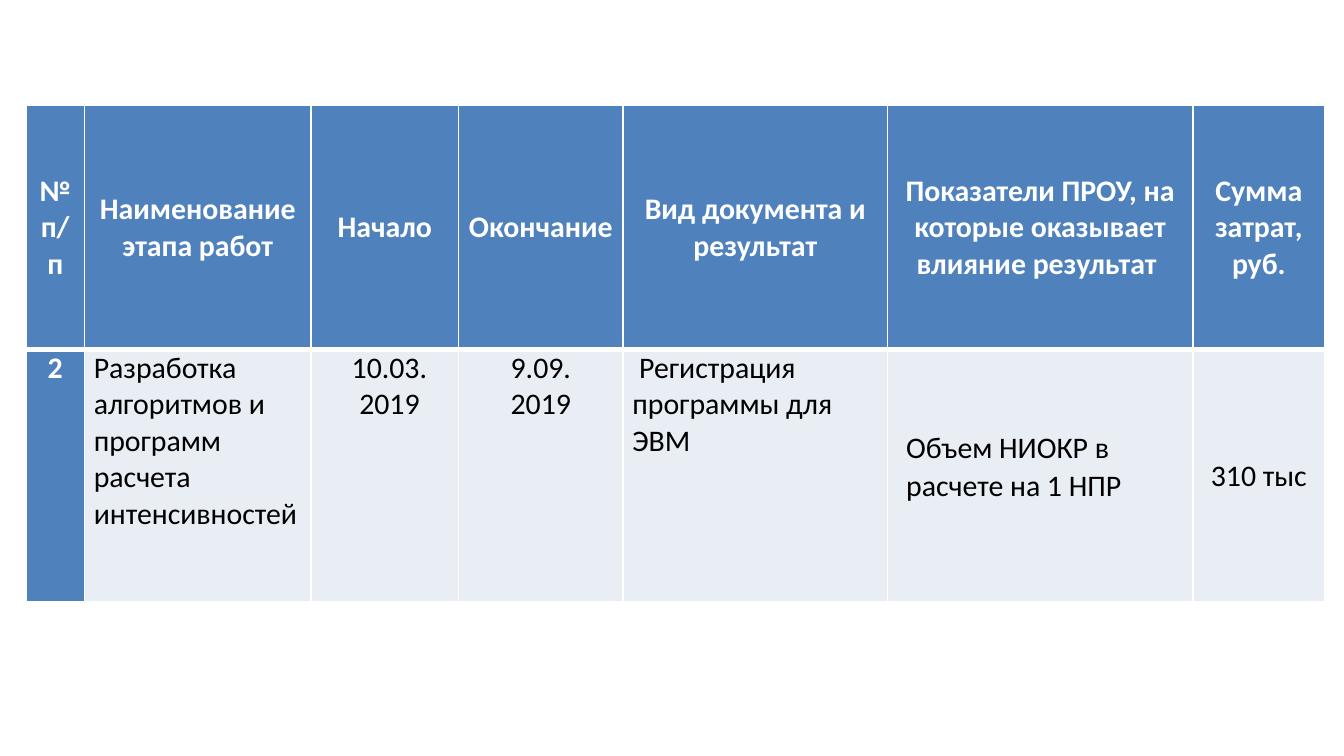
from dataclasses import dataclass

from lxml.etree import SubElement
from pptx import Presentation
from pptx.dml.color import RGBColor
from pptx.enum.text import MSO_ANCHOR, PP_ALIGN
from pptx.oxml.ns import qn
from pptx.util import Pt


@dataclass(frozen=True)
class Theme:
    font: str = "Calibri"
    size: float = 16
    accent: str = "4F81BD"
    body: str = "E9EDF4"
    light: str = "FFFFFF"
    dark: str = "000000"


theme = Theme()


def add_border(cell, side, width):
    line = SubElement(cell._tc.get_or_add_tcPr(), qn(f"a:{side}"), w=str(Pt(width)))
    fill = SubElement(line, qn("a:solidFill"))
    SubElement(fill, qn("a:srgbClr"), val=theme.light)


column_widths = [31.4, 121.4, 79, 88.2, 141.7, 163.5, 70.9]
row_heights = [131, 135]
rows = [
    [
        "№ п/п",
        "Наименование этапа работ",
        "Начало",
        "Окончание",
        "Вид документа и результат",
        "Показатели ПРОУ, на которые оказывает влияние результат ",
        "Сумма затрат, руб.",
    ],
    [
        "2",
        "Разработка алгоритмов и программ расчета интенсивностей",
        "10.03.\n2019",
        "9.09.\n2019",
        " Регистрация программы для ЭВМ",
        "Объем НИОКР в\nрасчете на 1 НПР",
        "310 тыс",
    ],
]
stage_column, start_column, document_column, indicator_column, cost_column = 1, 2, 4, 5, 6
left_columns = {stage_column, document_column, indicator_column}
middle_columns = {indicator_column, cost_column}

presentation = Presentation()
presentation.slide_width = Pt(720)
presentation.slide_height = Pt(405)
slide = presentation.slides.add_slide(presentation.slide_layouts[6])

table = slide.shapes.add_table(
    len(rows), len(column_widths), Pt(13.9), Pt(56.5), Pt(sum(column_widths)), Pt(sum(row_heights))
).table
for column, width in zip(table.columns, column_widths):
    column.width = Pt(width)
for row, height in zip(table.rows, row_heights):
    row.height = Pt(height)

for row_index, texts in enumerate(rows):
    for column_index, text in enumerate(texts):
        is_header = row_index == 0
        is_accent = is_header or column_index == 0
        cell = table.cell(row_index, column_index)
        cell.margin_left = cell.margin_right = Pt(5)
        cell.margin_top = cell.margin_bottom = 0
        is_middle = is_header or column_index in middle_columns
        cell.vertical_anchor = MSO_ANCHOR.MIDDLE if is_middle else MSO_ANCHOR.TOP

        border_widths = {"lnL": 1, "lnR": 1, "lnT": 1 if is_header else 3, "lnB": 3 if is_header else 1}
        for side, width in border_widths.items():
            add_border(cell, side, width)
        cell.fill.solid()
        cell.fill.fore_color.rgb = RGBColor.from_string(theme.accent if is_accent else theme.body)

        cell.text_frame.text = text
        for paragraph_index, paragraph in enumerate(cell.text_frame.paragraphs):
            is_left = not is_header and column_index in left_columns
            paragraph.alignment = PP_ALIGN.LEFT if is_left else PP_ALIGN.CENTER
            if not is_header and column_index == start_column:
                paragraph._p.get_or_add_pPr().set("indent", str(Pt(5)))
            if not is_header and column_index == indicator_column:
                paragraph._p.get_or_add_pPr().set("marL", str(Pt(5)))
                paragraph.line_spacing = Pt(10.6)
                paragraph.space_after = Pt(5)
                if paragraph_index > 0:
                    paragraph.space_before = Pt(5)
            for run in paragraph.runs:
                run.font.name = theme.font
                run.font.size = Pt(theme.size)
                run.font.bold = is_accent
                run.font.color.rgb = RGBColor.from_string(theme.light if is_accent else theme.dark)

presentation.save("out.pptx")
